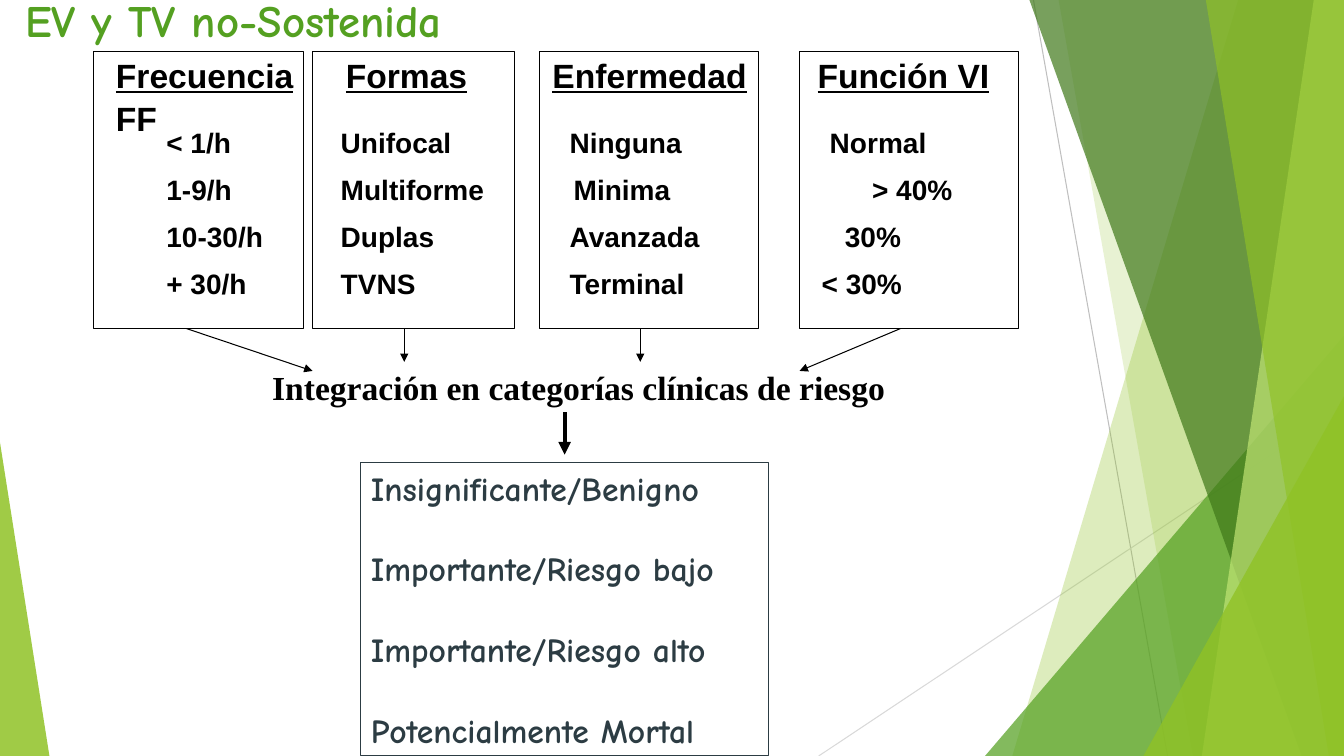
from pptx import Presentation
from pptx.dml.color import RGBColor
from pptx.enum import shapes, text
from pptx.oxml import ns
from pptx.util import Inches, Pt
from lxml import etree

BLACK = RGBColor(0x00, 0x00, 0x00)
SLATE = RGBColor(0x2C, 0x3C, 0x43)
LIME = RGBColor(0x90, 0xC2, 0x26)
GREEN = RGBColor(0x54, 0xA0, 0x21)
FOREST = RGBColor(0x3F, 0x78, 0x19)
PALE = RGBColor(0xC0, 0xE4, 0x74)
GREY = RGBColor(0xBF, 0xBF, 0xBF)
SILVER = RGBColor(0xD9, 0xD9, 0xD9)

WIDTH, HEIGHT = 13.33, 7.5
CARD_TOP, CARD_HEIGHT = 0.51, 2.75

CARDS = [
    (0.93, 2.08, ["Frecuencia", "FF"], 0.22,
     [("< 1/h", 0.72), ("1-9/h", 0.72), ("10-30/h", 0.72), ("+ 30/h", 0.72)],
     1.85, (3.1, 3.68)),
    (3.1, 2, ["Formas"], 0.33,
     [("Unifocal", 0.28), ("Multiforme", 0.28), ("Duplas", 0.28), ("TVNS", 0.28)],
     4.01, (4.01, 3.59)),
    (5.35, 2.17, ["Enfermedad"], 0.13,
     [("Ninguna", 0.3), ("Minima", 0.34), ("Avanzada", 0.3), ("Terminal", 0.3)],
     6.35, (6.35, 3.59)),
    (7.93, 2.17, ["Función VI"], 0.18,
     [("Normal", 0.3), ("> 40%", 0.72), ("30%", 0.45), ("< 30%", 0.22)],
     8.93, (7.93, 3.68)),
]
RISKS = ["Insignificante/Benigno", "Importante/Riesgo bajo",
         "Importante/Riesgo alto", "Potencialmente Mortal"]


def add_line(s, start, end, color, width=0.75, arrow=False):
    ends = [Inches(v) for v in (*start, *end)]
    line = s.shapes.add_connector(shapes.MSO_CONNECTOR.STRAIGHT, *ends)
    line.line.color.rgb = color
    line.line.width = Pt(width)
    if arrow:
        etree.SubElement(line.line._get_or_add_ln(), ns.qn("a:tailEnd"), type="triangle")
    etree.SubElement(line._element.spPr, ns.qn("a:effectLst"))


def tint(sp, color, opacity):
    sp.shadow.inherit = False
    sp.line.fill.background()
    sp.fill.solid()
    sp.fill.fore_color.rgb = color
    srgb = sp._element.spPr.find(".//" + ns.qn("a:srgbClr"))
    etree.SubElement(srgb, ns.qn("a:alpha"), val=str(opacity * 1000))


def add_band(s, top_x, top_right, right, bottom_x, height, color, opacity):
    points = [(top_x, 0), (top_right, 0), (right, height), (bottom_x, height)]
    points = [(Inches(x), Inches(y)) for x, y in points]
    builder = s.shapes.build_freeform(*points[0], scale=1.0)
    builder.add_line_segments(points[1:], close=True)
    tint(builder.convert_to_shape(), color, opacity)


def add_triangle(s, left, top, width, height, apex, color, opacity):
    sp = s.shapes.add_shape(shapes.MSO_SHAPE.ISOSCELES_TRIANGLE, Inches(left),
                            Inches(top), Inches(width), Inches(height))
    sp.adjustments[0] = apex
    tint(sp, color, opacity)


def add_backdrop(s, width, height):
    add_line(s, (10.25, 0), (11.58, height), GREY)
    add_line(s, (width, 4.03), (8.12, height), SILVER)
    add_band(s, 12.28, width, width, 10.04, height, LIME, 30)
    add_band(s, 10.5, width, width, 11.83, height, LIME, 20)
    add_triangle(s, width - 3.56, height - 4.17, 3.56, 4.17, 1, GREEN, 72)
    add_band(s, 10.21, width, width, 12.91, height, FOREST, 70)
    add_band(s, 13.03, width, width, 11.92, height, PALE, 70)
    add_band(s, 11.96, width, width, 13.18, height, LIME, 65)
    add_triangle(s, width - 1.99, height - 3.57, 1.99, 3.57, 1, LIME, 80)
    add_triangle(s, 0, height - 3.11, 0.49, 3.11, 0, LIME, 85)


def write(sp, lines, font, size, color, insets=(0.1, 0.05, 0.1, 0.05), wrap=True):
    tf = sp.text_frame
    tf.auto_size = text.MSO_AUTO_SIZE.NONE
    tf.word_wrap = wrap
    tf.vertical_anchor = text.MSO_ANCHOR.TOP
    tf.margin_left, tf.margin_top, tf.margin_right, tf.margin_bottom = map(Inches, insets)
    tf.text = "\n".join(lines)
    for p in tf.paragraphs:
        p.alignment = text.PP_ALIGN.LEFT
        for r in p.runs:
            r.font.name = font
            r.font.size = Pt(size)
            r.font.bold = True
            r.font.color.rgb = color
    return tf.paragraphs


def add_frame(s, left, top, width, height, color):
    sp = s.shapes.add_shape(shapes.MSO_SHAPE.RECTANGLE, Inches(left), Inches(top),
                            Inches(width), Inches(height))
    sp.shadow.inherit = False
    sp.fill.background()
    sp.line.color.rgb = color
    sp.line.width = Pt(0.75)
    return sp


def add_text(s, left, top, width, height):
    return s.shapes.add_textbox(Inches(left), Inches(top), Inches(width), Inches(height))


def add_card(s, left, top, width, height, heading, indent, values):
    frame = add_frame(s, left, top, width, height, BLACK)
    paragraphs = write(frame, heading, "Arial", 24, BLACK, (indent, 0.03, 0, 0))
    paragraphs[0].runs[0].font.underline = True
    for p in paragraphs[1:]:
        p.space_before = Pt(2)
    body = add_text(s, left, top + 0.6, width, height - 0.6)
    rows = write(body, [value for value, _ in values], "Arial", 20, BLACK, (0, 0, 0, 0))
    for p, (_, offset) in zip(rows, values):
        p.line_spacing = Pt(33.6)
        p._p.get_or_add_pPr().set("marL", str(Inches(offset)))


def add_risks(s, left, top, width, height):
    frame = add_frame(s, left, top, width, height, SLATE)
    paragraphs = write(frame, RISKS, "Comic Neue", 24, SLATE, wrap=False)
    for i, p in enumerate(paragraphs):
        p.line_spacing = Pt(28.8)
        p.space_before = Pt(28.8 if i else 0)


def add_title(s, left, top, width, height):
    title = s.shapes.title
    title.left, title.top = Inches(left), Inches(top)
    title.width, title.height = Inches(width), Inches(height)
    write(title, ["EV y TV no-Sostenida"], "Comic Neue", 32, GREEN)


def main():
    prs = Presentation()
    prs.slide_width, prs.slide_height = Inches(WIDTH), Inches(HEIGHT)
    s = prs.slides.add_slide(prs.slide_layouts[5])
    add_backdrop(s, WIDTH, HEIGHT)
    add_title(s, 0.15, -0.12, 9.4, 0.63)
    for left, width, heading, indent, values, arrow_x, target in CARDS:
        add_card(s, left, CARD_TOP, width, CARD_HEIGHT, heading, indent, values)
        add_line(s, (arrow_x, CARD_TOP + CARD_HEIGHT), target, BLACK, arrow=True)
    summary = add_text(s, 2.6, 3.59, 6.28, 0.5)
    write(summary, ["Integración en categorías clínicas de riesgo"],
          "Times New Roman", 24, BLACK, wrap=False)
    add_line(s, (5.6, 4.09), (5.6, 4.51), BLACK, 3, arrow=True)
    add_risks(s, 3.58, 4.59, 4.04, 2.91)
    prs.save("out.pptx")


if __name__ == "__main__":
    main()
